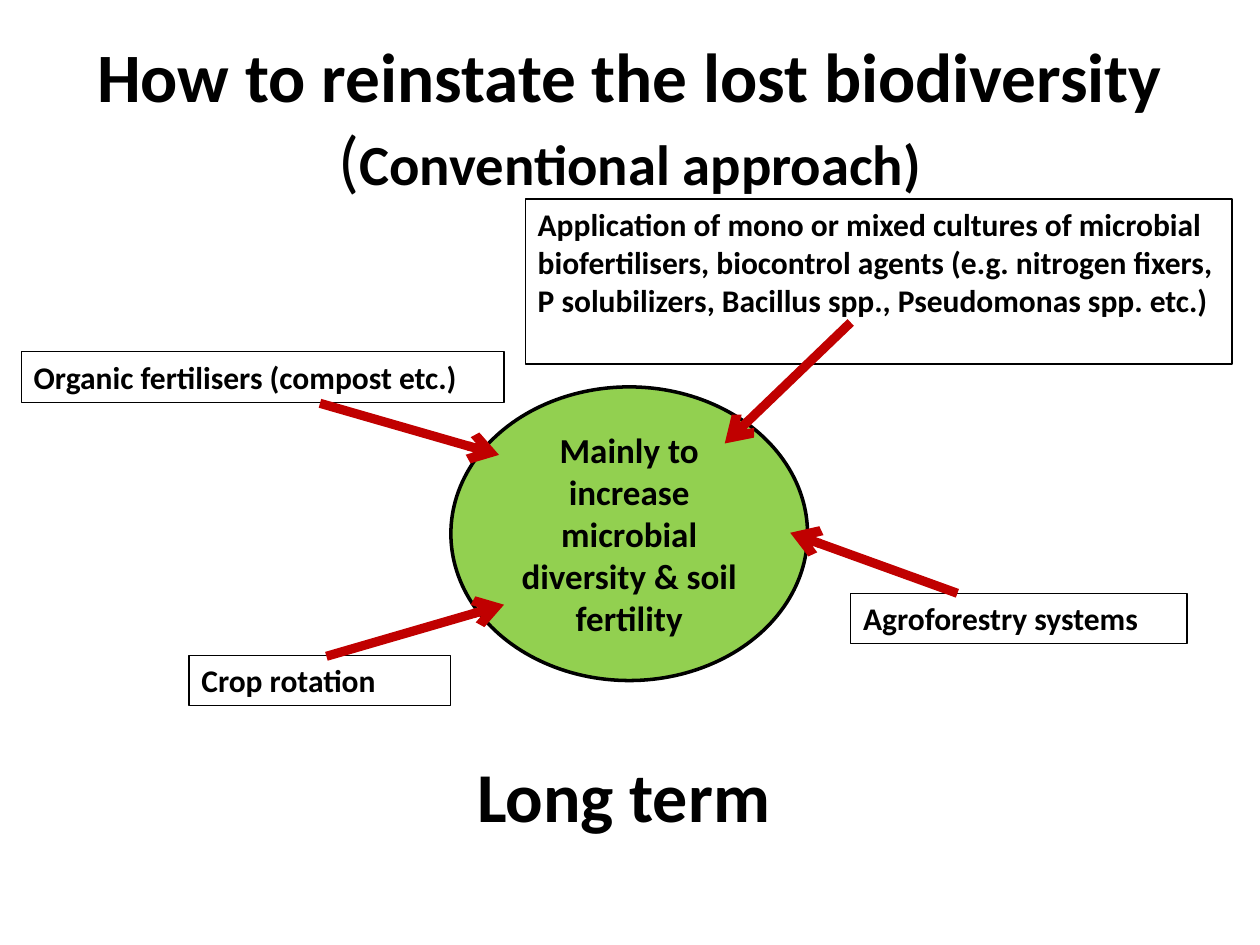
from lxml.etree import SubElement
from pptx import Presentation
from pptx.dml.color import RGBColor
from pptx.enum.shapes import MSO_CONNECTOR, MSO_SHAPE
from pptx.enum.text import MSO_ANCHOR, PP_ALIGN
from pptx.oxml.ns import qn
from pptx.util import Cm, Pt

COLORS = {"text": "000000", "outline": "000000", "goal": "92D050", "arrow": "C00000"}


class SlideBuilder:
    font_name = "Calibri"

    def __init__(self, slide):
        self.slide = slide

    def color(self, name):
        return RGBColor.from_string(COLORS[name])

    def add_text(self, shape, runs, align, anchor, wrap=True):
        """Fill a shape with one paragraph of (text, size, bold) runs."""
        frame = shape.text_frame
        frame.word_wrap = wrap
        frame.vertical_anchor = anchor
        paragraph = frame.paragraphs[0]
        paragraph.alignment = align
        paragraph.font.name = self.font_name
        paragraph.font.color.rgb = self.color("text")
        for text, size, bold in runs:
            run = paragraph.add_run()
            run.text = text
            run.font.size = Pt(size)
            run.font.bold = bold

    def heading(self, bounds, runs, align=PP_ALIGN.CENTER, anchor=MSO_ANCHOR.MIDDLE, wrap=True):
        box = self.slide.shapes.add_textbox(*map(Cm, bounds))
        self.add_text(box, runs, align, anchor, wrap)

    def outlined(self, kind, bounds, line_width, fill=None):
        shape = self.slide.shapes.add_shape(kind, *map(Cm, bounds))
        shape.shadow.inherit = False
        if fill:
            shape.fill.solid()
            shape.fill.fore_color.rgb = self.color(fill)
        else:
            shape.fill.background()
        shape.line.color.rgb = self.color("outline")
        shape.line.width = Pt(line_width)
        return shape

    def goal(self, bounds, text):
        oval = self.outlined(MSO_SHAPE.OVAL, bounds, 2, "goal")
        self.add_text(oval, [(text, 20, True)], PP_ALIGN.CENTER, MSO_ANCHOR.MIDDLE)

    def measure(self, bounds, text):
        box = self.outlined(MSO_SHAPE.RECTANGLE, bounds, 0.75)
        self.add_text(box, [(text, 18, True)], PP_ALIGN.LEFT, MSO_ANCHOR.TOP)

    def arrow(self, start, end):
        link = self.slide.shapes.add_connector(MSO_CONNECTOR.STRAIGHT, *map(Cm, start + end))
        link.line.color.rgb = self.color("arrow")
        link.line.width = Pt(5.25)
        properties = link.element.spPr
        SubElement(properties.find(qn("a:ln")), qn("a:tailEnd"), type="arrow")
        SubElement(properties, qn("a:effectLst"))


def main():
    deck = Presentation()
    deck.slide_width, deck.slide_height = Cm(25.4), Cm(19.05)
    builder = SlideBuilder(deck.slides.add_slide(deck.slide_layouts[6]))

    # Title
    builder.heading((1.27, 0.76, 22.86, 3.18), [
        ("How to reinstate the lost biodiversity ", 39.6, True),
        ("(", 39.6, False),
        ("Conventional approach)", 32.4, True),
    ])

    # Central goal
    builder.goal((9.09, 7.8, 7.19, 5.92),
                 "Mainly to increase microbial diversity & soil fertility")

    # Measures: bounds, text, arrow start and arrow end
    measures = [
        ((3.81, 13.21, 5.28, 1.02), "Crop rotation", (6.58, 13.23), (10.16, 12.19)),
        ((17.15, 11.96, 6.78, 1.02), "Agroforestry systems", (19.3, 11.96), (15.93, 10.74)),
        ((0.43, 7.09, 9.73, 1.02), "Organic fertilisers (compost etc.)",
         (6.45, 8.13), (10.06, 9.17)),
        ((10.59, 4.01, 14.25, 3.33),
         "Application of mono or mixed cultures of microbial biofertilisers, biocontrol agents "
         "(e.g. nitrogen fixers, P solubilizers, Bacillus spp., Pseudomonas spp. etc.)",
         (17.15, 6.5), (14.61, 8.94)),
    ]
    for bounds, text, start, end in measures:
        builder.measure(bounds, text)
        builder.arrow(start, end)

    # Time horizon
    builder.heading((9.37, 15.04, 6.5, 1.96), [("Long term", 40, True)],
                    PP_ALIGN.LEFT, MSO_ANCHOR.TOP, wrap=False)

    deck.save("out.pptx")


if __name__ == "__main__":
    main()
